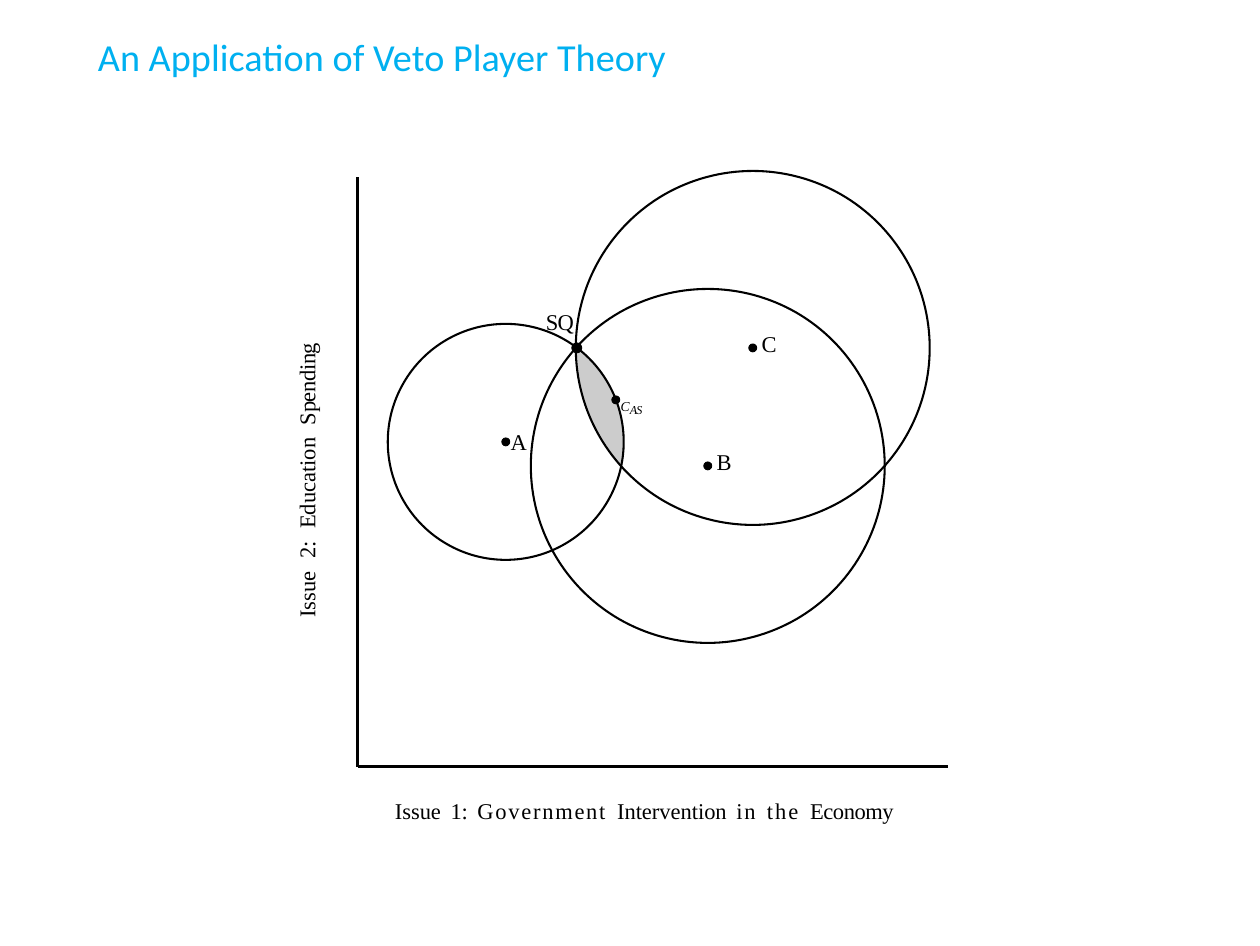
import math
import pptx
import pptx.util
import pptx.dml.color
import pptx.enum.shapes
import pptx.enum.text
import pptx.oxml.ns
import lxml.etree

# Content, lengths in px (250 to the inch), slide size in points
PX = 914400 / 250
SIZE = (363, 272.5)
HEX = {"title": "00B0F0", "ink": "000000", "win": "CCCCCC"}
SERIF = "Times New Roman"

TITLE = "An Application of Veto Player Theory"
SQ = (577, 348)
LOW = (621, 465)
# Player: ideal point and radius of the indifference curve
CURVES = {"A": (506, 442, 118), "C": (753, 348, 177), "B": (708, 466, 177)}
DOTS = [(*SQ, 5), (616, 400, 4)] + [(x, y, 4) for x, y, r in CURVES.values()]
CORNER = (358, 767)
ENDS = [(948, 767), (358, 177)]

# Label: box, then runs of text, size, spacing, italic, baseline
LABELS = [
    ((508, 424, 26, 35), [("A", 6.5, -0.5, False, 0)]),
    ((759, 326, 26, 35), [("C", 6.5, -0.5, False, 0)]),
    ((714, 444, 26, 35), [("B", 6.5, -0.5, False, 0)]),
    ((543, 304, 42, 35), [("SQ", 6.5, -0.2, False, 0)]),
    ((618, 387, 50, 28), [("C", 6.8, -0.4, True, 12), ("AS", 3.5, -0.2, True, 0)]),
]
# Axis title: box, turned or not, gap between words, words with spacing
AXES = [
    ((392, 793, 530, 35), False, 1.1,
     [("Issue", 0), ("1:", 0), ("Government", 0.5), ("Intervention", 0),
      ("in", 0.5), ("the", 0.6), ("Economy", -0.1)]),
    ((293, 318, 33, 300), True, 2,
     [("Issue", 0), ("2:", 0), ("Education", 0), ("Spending", -0.1)]),
]


def emu(*vals):
    return [round(v * PX) for v in vals]


def tint(name):
    return pptx.dml.color.RGBColor.from_string(HEX[name])


def paint(shape, fill=None, line=None):
    shape.shadow.inherit = False
    if fill:
        shape.fill.solid()
        shape.fill.fore_color.rgb = tint(fill)
    else:
        shape.fill.background()
    if line:
        shape.line.color.rgb = tint("ink")
        shape.line.width = pptx.util.Pt(line)
    else:
        shape.line.fill.background()


def disc(x, y, r, fill, line):
    oval = pptx.enum.shapes.MSO_SHAPE.OVAL
    paint(slide.shapes.add_shape(oval, *emu(x - r, y - r, 2 * r, 2 * r)), fill, line)


def setup(frame, left, top, before):
    frame.word_wrap = True
    frame.vertical_anchor = pptx.enum.text.MSO_ANCHOR.TOP
    frame.margin_left, frame.margin_top = emu(left, top)
    frame.margin_right = frame.margin_bottom = 0
    para = frame.paragraphs[0]
    para.alignment = pptx.enum.text.PP_ALIGN.LEFT
    para.space_before = pptx.util.Pt(before)
    return para


def write(para, text, size, gap=0, slant=False, base=0, face=SERIF, hue="ink"):
    run = para.add_run()
    run.text = text
    font = run.font
    font.size, font.name = pptx.util.Pt(size), face
    font.color.rgb = tint(hue)
    if slant:
        font.italic = True
    props = run._r.get_or_add_rPr()
    if gap:
        props.set("spc", str(round(gap * 100)))
    if base:
        props.set("baseline", str(base * 1000))


def arc(curve, start, end, steps=20):
    x, y, r = curve
    a, b = (math.atan2(q - y, p - x) % math.tau for p, q in (start, end))
    turn = (b - a + math.pi) % math.tau - math.pi
    angles = [a + turn * i / steps for i in range(steps + 1)]
    return [(x + r * math.cos(t), y + r * math.sin(t)) for t in angles]


deck = pptx.Presentation()
deck.slide_width, deck.slide_height = (pptx.util.Pt(side) for side in SIZE)
slide = deck.slides.add_slide(deck.slide_layouts[5])

# Title
head = slide.shapes.title
head.left, head.top, head.width, head.height = emu(95, 31, 640, 50)
write(setup(head.text_frame, 3, 2, 0.9), TITLE, 11, face="Calibri", hue="title")

# Winset between the curves of A and C
rim = arc(CURVES["A"], SQ, LOW) + arc(CURVES["C"], LOW, SQ)
form = slide.shapes.build_freeform(*rim[0], scale=PX)
form.add_line_segments(rim[1:], close=True)
paint(form.convert_to_shape(), "win")

# Axes
for end in ENDS:
    axis = slide.shapes.add_connector(
        pptx.enum.shapes.MSO_CONNECTOR.STRAIGHT, *emu(*CORNER, *end))
    axis.line.color.rgb = tint("ink")
    axis.line.width = pptx.util.Pt(0.85)
    lxml.etree.SubElement(axis._element.spPr, pptx.oxml.ns.qn("a:effectLst"))

# Indifference curves and points
for x, y, r in CURVES.values():
    disc(x, y, r, None, 0.6)
for x, y, r in DOTS:
    disc(x, y, r, "ink", 0.25)

# Point labels
for box, runs in LABELS:
    para = setup(slide.shapes.add_textbox(*emu(*box)).text_frame, 3, 4, 1.1)
    for run in runs:
        write(para, *run)

# Axis titles
for box, turned, gap, words in AXES:
    frame = slide.shapes.add_textbox(*emu(*box)).text_frame
    if turned:
        frame._txBody.bodyPr.set("vert", "vert270")
        para = setup(frame, 0, 0, 0.3)
    else:
        para = setup(frame, 3, 4, 1.1)
    for i, (word, space) in enumerate(words):
        if i:
            write(para, " ", 6.5, gap)
        write(para, word, 6.5, space)

deck.save("out.pptx")
